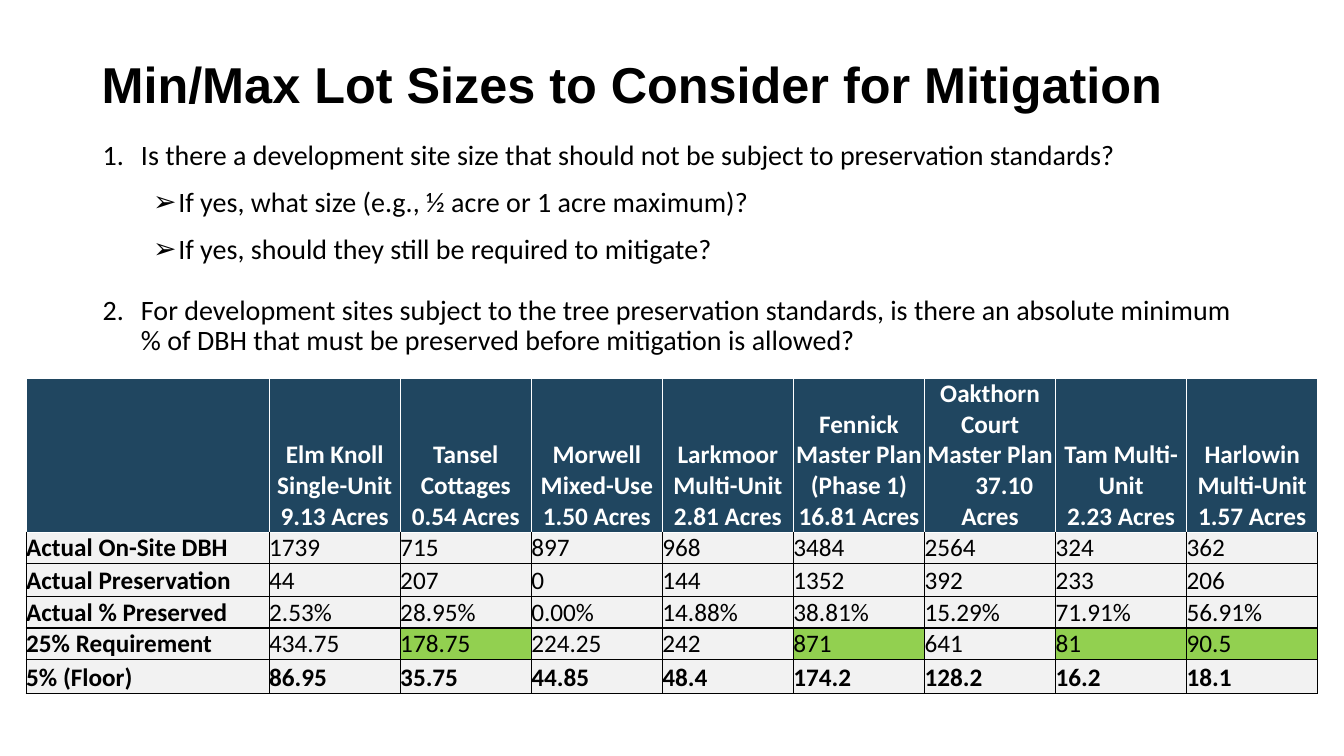
import pptx
import pptx.util
import pptx.dml.color
import pptx.enum.text
import pptx.oxml.ns
import lxml.etree

Inches, Pt = pptx.util.Inches, pptx.util.Pt
ALIGN, ANCHOR = pptx.enum.text.PP_ALIGN, pptx.enum.text.MSO_ANCHOR

COLORS = {"black": "000000", "white": "FFFFFF", "header": "204660",
          "body": "F2F2F2", "met": "92D050"}

TITLE = "Min/Max Lot Sizes to Consider for Mitigation"

# text, level, space after in points
QUESTIONS = [
    ("Is there a development site size that should not be subject to preservation standards?", 0, 12),
    ("If yes, what size (e.g., ½ acre or 1 acre maximum)?", 1, 12),
    ("If yes, should they still be required to mitigate?", 1, 22),
    ("For development sites subject to the tree preservation standards, is there an absolute "
     "minimum % of DBH that must be preserved before mitigation is allowed?", 0, 0),
]
# left margin, first-line indent, bullet tag, bullet attributes
LEVELS = [
    (0.38, -0.38, "a:buAutoNum", {"type": "arabicPeriod"}),
    (0.75, -0.25, "a:buChar", {"char": "➢"}),
]

SITES = [
    "",
    "Elm Knoll Single-Unit 9.13 Acres",
    "Tansel\nCottages 0.54 Acres",
    "Morwell Mixed-Use 1.50 Acres",
    "Larkmoor Multi-Unit 2.81 Acres",
    "Fennick Master Plan\n(Phase 1) 16.81 Acres",
    "Oakthorn Court\nMaster Plan\n37.10\nAcres",
    "Tam Multi-Unit\n2.23 Acres",
    "Harlowin Multi-Unit 1.57 Acres",
]
SHIFTED_LINE = "37.10"
PRESERVED = ["Actual Preservation", "44", "207", "0", "144", "1352", "392", "233", "206"]
REQUIRED = ["25% Requirement", "434.75", "178.75", "224.25", "242", "871", "641", "81", "90.5"]
FLOOR = ["5% (Floor)", "86.95", "35.75", "44.85", "48.4", "174.2", "128.2", "16.2", "18.1"]
ROWS = [
    SITES,
    ["Actual On-Site DBH", "1739", "715", "897", "968", "3484", "2564", "324", "362"],
    PRESERVED,
    ["Actual % Preserved", "2.53%", "28.95%", "0.00%", "14.88%", "38.81%", "15.29%", "71.91%", "56.91%"],
    REQUIRED,
    FLOOR,
]
ROW_HEIGHTS = [1.53, 0.31, 0.33, 0.31, 0.31, 0.34]
COLUMN_WIDTHS = [2.41] + [1.3] * 8


def rgb(name):
    return pptx.dml.color.RGBColor.from_string(COLORS[name])


def add_element(parent, tag, **attributes):
    return lxml.etree.SubElement(parent, pptx.oxml.ns.qn(tag), attributes)


def style_font(para, size, color, bold=False, face="Calibri"):
    for span in para.runs:
        span.font.name, span.font.size, span.font.bold = face, Pt(size), bold
        span.font.color.rgb = rgb(color)


def add_text_box(slide, left, top, width, height, anchor):
    box = slide.shapes.add_textbox(*map(Inches, (left, top, width, height)))
    box.text_frame.word_wrap = True
    box.text_frame.vertical_anchor = anchor
    return box.text_frame


def add_title(slide):
    para = add_text_box(slide, 0.91, 0.53, 11.5, 0.65, ANCHOR.BOTTOM).paragraphs[0]
    para.text = TITLE
    para.line_spacing = 0.9
    style_font(para, 36, "black", bold=True, face="Arial")


def add_questions(slide):
    frame = add_text_box(slide, 0.92, 1.35, 11.49, 2.35, ANCHOR.TOP)
    frame.text = "\n".join(text for text, level, after in QUESTIONS)
    for para, (text, level, after) in zip(frame.paragraphs, QUESTIONS):
        margin, indent, bullet, attributes = LEVELS[level]
        para.level = level
        para.line_spacing = 0.9
        para.space_after = Pt(after)
        properties = para._p.get_or_add_pPr()
        properties.set("marL", str(Inches(margin)))
        properties.set("indent", str(Inches(indent)))
        add_element(properties, "a:buFont", typeface="Calibri")
        add_element(properties, bullet, **attributes)
        style_font(para, 20, "black")


def set_borders(cell, sides):
    """Draw 1 pt borders; sides maps L, R, T, B to colour names."""
    properties = cell._tc.get_or_add_tcPr()
    for side, color in sides.items():
        line = add_element(properties, "a:ln" + side, w=str(Pt(1)))
        add_element(add_element(line, "a:solidFill"), "a:srgbClr", val=COLORS[color])


def cell_fill(row, column):
    if row == 0:
        return "header"
    if ROWS[row] is REQUIRED and column and float(PRESERVED[column]) >= float(REQUIRED[column]):
        return "met"
    return "body"


def style_cell(cell, row, column):
    header = row == 0
    cell.text = ROWS[row][column]
    cell.vertical_anchor = ANCHOR.BOTTOM
    cell.margin_left = cell.margin_right = cell.margin_top = cell.margin_bottom = 0
    border = "white" if header else "black"
    top = "white" if row <= 1 else "black"
    set_borders(cell, {"L": border, "R": border, "T": top, "B": border})
    cell.fill.solid()
    cell.fill.fore_color.rgb = rgb(cell_fill(row, column))
    bold = header or column == 0 or ROWS[row] is FLOOR
    for para in cell.text_frame.paragraphs:
        para.alignment = ALIGN.CENTER if header else ALIGN.LEFT
        if para.text == SHIFTED_LINE:
            para._p.get_or_add_pPr().set("marL", str(Inches(0.28)))
        style_font(para, 18, "white" if header else "black", bold)


def add_site_table(slide):
    table = slide.shapes.add_table(
        len(ROWS), len(COLUMN_WIDTHS), Inches(0.26), Inches(3.75),
        Inches(sum(COLUMN_WIDTHS)), Inches(sum(ROW_HEIGHTS))).table
    table.horz_banding = False
    for column, width in zip(table.columns, COLUMN_WIDTHS):
        column.width = Inches(width)
    for row, height in zip(table.rows, ROW_HEIGHTS):
        row.height = Inches(height)
    for row in range(len(ROWS)):
        for column in range(len(COLUMN_WIDTHS)):
            style_cell(table.cell(row, column), row, column)


def main():
    deck = pptx.Presentation()
    deck.slide_width, deck.slide_height = Inches(13.33), Inches(7.5)
    slide = deck.slides.add_slide(deck.slide_layouts[6])
    add_title(slide)
    add_questions(slide)
    add_site_table(slide)
    deck.save("out.pptx")


if __name__ == "__main__":
    main()
